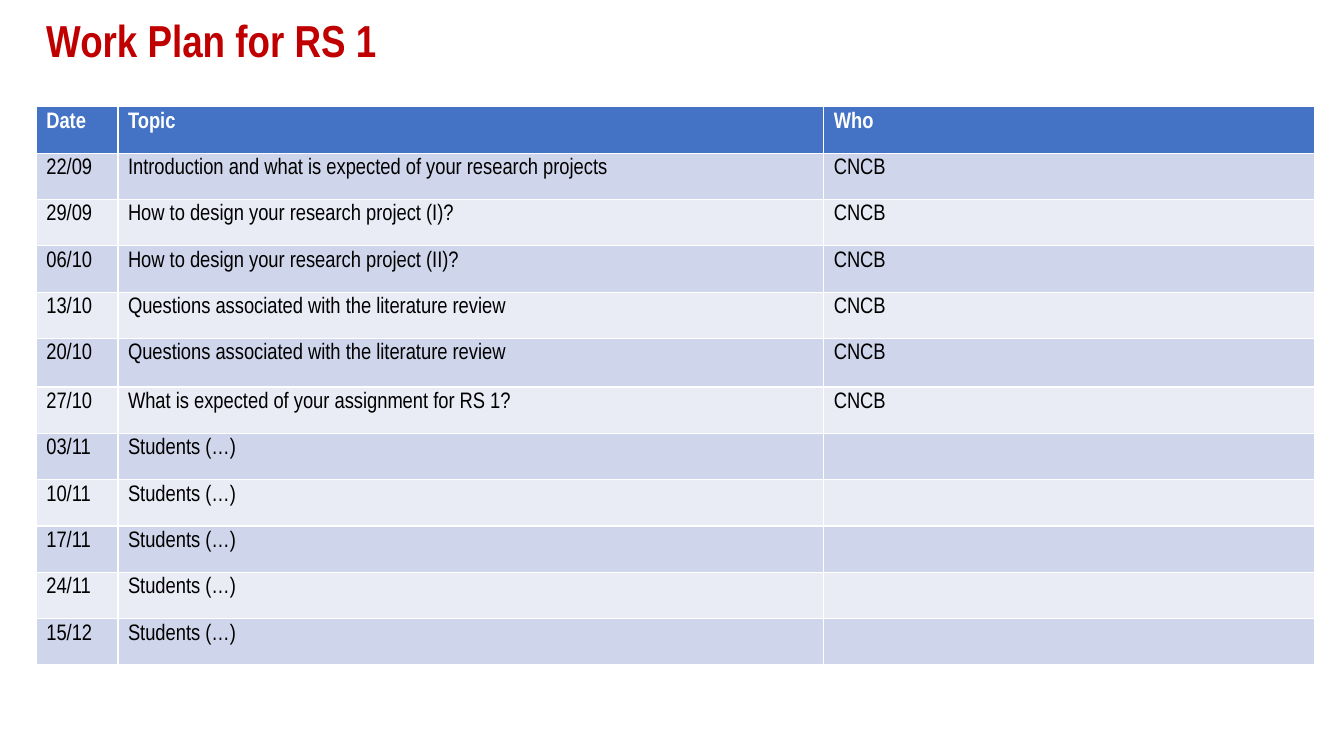
"""Build the work plan slide: a title above a dated table of topics."""
from dataclasses import dataclass

import pptx
import pptx.dml.color
import pptx.enum.text
import pptx.util

Inches = pptx.util.Inches

COLORS = {
    "title": "C00000",
    "header": "4472C4",
    "header_text": "FFFFFF",
    "odd_row": "CFD5EA",
    "even_row": "E9EBF5",
    "body_text": "000000",
}
FONT = "Arial Narrow"
LEFT, WIDTH = 0.36, 12.68
COLUMN_WIDTHS = (0.81, 7, 4.87)
ROW_HEIGHT = 0.46
TALL_ROW, TALL_ROW_HEIGHT = 5, 0.48


@dataclass(frozen=True)
class Session:
    date: str
    topic: str
    who: str = ""


HEADER = Session("Date", "Topic", "Who")
SESSIONS = [
    Session("22/09", "Introduction and what is expected of your research projects", "CNCB"),
    Session("29/09", "How to design your research project (I)?", "CNCB"),
    Session("06/10", "How to design your research project (II)?", "CNCB"),
    Session("13/10", "Questions associated with the literature review", "CNCB"),
    Session("20/10", "Questions associated with the literature review", "CNCB"),
    Session("27/10", "What is expected of your assignment for RS 1?", "CNCB"),
    *(Session(date, "Students (…)") for date in ("03/11", "10/11", "17/11", "24/11", "15/12")),
]


def color(name: str) -> pptx.dml.color.RGBColor:
    return pptx.dml.color.RGBColor.from_string(COLORS[name])


def write(frame: pptx.text.text.TextFrame, text: str, size: int, color_name: str, bold: bool) -> None:
    frame.text = text
    for span in frame.paragraphs[0].runs:
        span.font.name = FONT
        span.font.size = pptx.util.Pt(size)
        span.font.bold = bold
        span.font.color.rgb = color(color_name)


def add_title(page: pptx.slide.Slide) -> None:
    box = page.shapes.add_textbox(Inches(LEFT), Inches(0.11), Inches(WIDTH), Inches(0.64))
    frame = box.text_frame
    frame.word_wrap = True
    frame.vertical_anchor = pptx.enum.text.MSO_ANCHOR.MIDDLE
    write(frame, "Work Plan for RS 1", 32, "title", True)
    frame.paragraphs[0].line_spacing = 0.9


def fill_row(table: pptx.table.Table, index: int, session: Session) -> None:
    is_header = index == 0
    fill_name = "header" if is_header else "odd_row" if index % 2 else "even_row"
    text_name = "header_text" if is_header else "body_text"
    texts = (session.date, session.topic, session.who)
    for cell, text in zip(table.rows[index].cells, texts):
        cell.fill.solid()
        cell.fill.fore_color.rgb = color(fill_name)
        if text:
            write(cell.text_frame, text, 16, text_name, is_header)


def add_plan(page: pptx.slide.Slide) -> None:
    rows = [HEADER, *SESSIONS]
    table = page.shapes.add_table(
        len(rows), len(COLUMN_WIDTHS),
        Inches(LEFT), Inches(1.06), Inches(WIDTH), Inches(ROW_HEIGHT * len(rows)),
    ).table
    for column, width in zip(table.columns, COLUMN_WIDTHS):
        column.width = Inches(width)
    for index, session in enumerate(rows):
        height = TALL_ROW_HEIGHT if index == TALL_ROW else ROW_HEIGHT
        table.rows[index].height = Inches(height)
        fill_row(table, index, session)


def main() -> None:
    deck = pptx.Presentation()
    deck.slide_width = Inches(13.33)
    deck.slide_height = Inches(7.5)
    page = deck.slides.add_slide(deck.slide_layouts[6])
    add_title(page)
    add_plan(page)
    deck.save("out.pptx")


if __name__ == "__main__":
    main()
